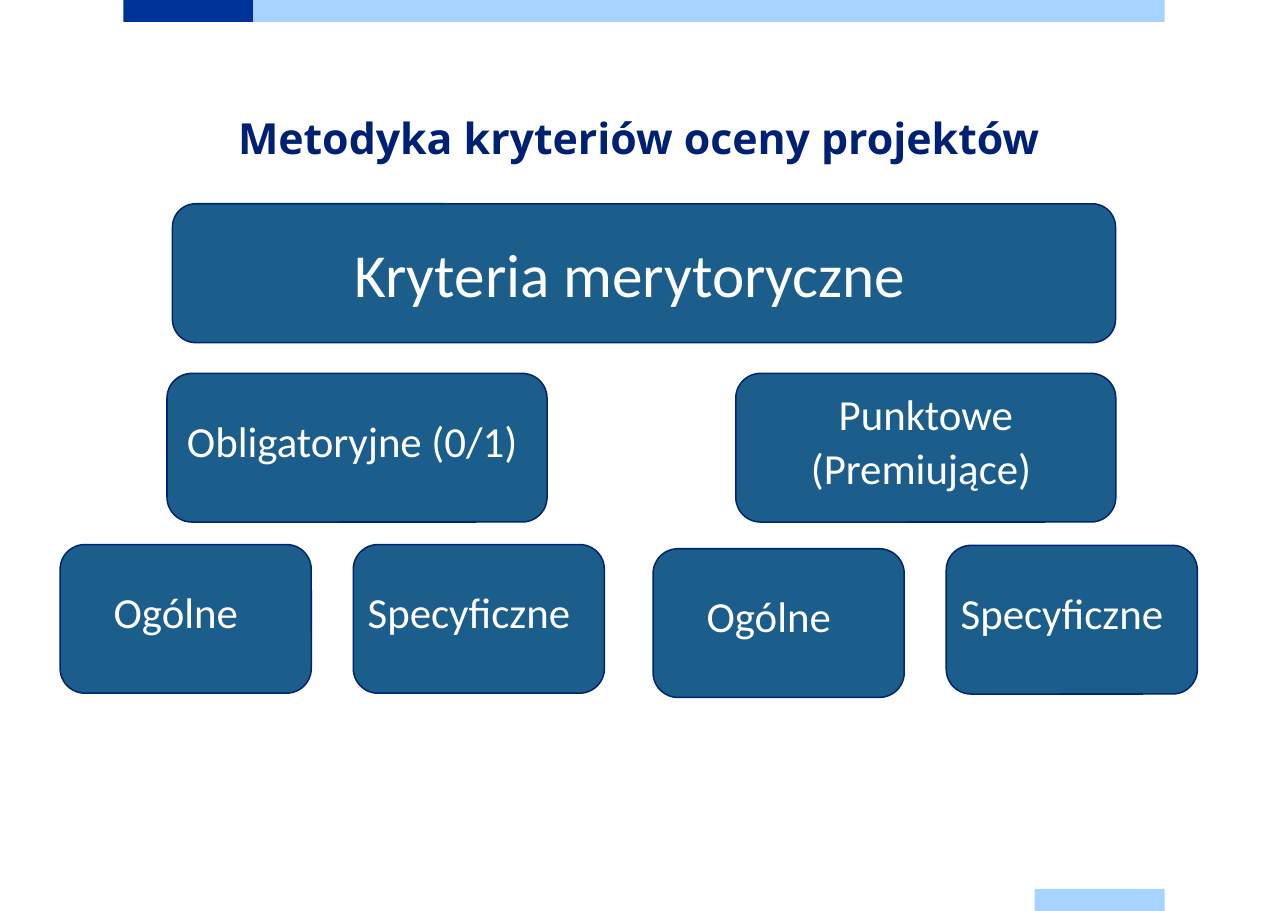
import dataclasses

import pptx
import pptx.dml.color
import pptx.enum.shapes
import pptx.enum.text
import pptx.oxml
import pptx.oxml.ns
import pptx.util

COLOURS = {
    "navy": "003399",
    "sky": "A6D3FF",
    "box": "1B5D8B",
    "outline": "002671",
    "title": "002073",
    "white": "FFFFFF",
}
PAGE_WIDTH, PAGE_HEIGHT = 11.69, 8.27
SHAPES = pptx.enum.shapes.MSO_SHAPE
ANCHOR = pptx.enum.text.MSO_ANCHOR


@dataclasses.dataclass
class Area:
    """Position and size in percent of the page."""
    left: float
    top: float
    width: float
    height: float


@dataclasses.dataclass
class Bar:
    area: Area
    colour: str


@dataclasses.dataclass
class Criterion:
    area: Area
    lines: list[str]
    size: int = 28
    leading: int | None = 24
    shift: float = 0.18  # right margin in inches, the left one is zero
    is_body: bool = False


# Decorative bars
MARGIN, STUB, BAR_HEIGHT = 9.58, 10.09, 2.42
CONTENT = 80.84
BARS = [
    Bar(Area(MARGIN, 0, STUB, BAR_HEIGHT), "navy"),
    Bar(Area(MARGIN + STUB, 0, CONTENT - STUB, BAR_HEIGHT), "sky"),
    Bar(Area(MARGIN + CONTENT - STUB, 100 - BAR_HEIGHT, STUB, BAR_HEIGHT), "sky"),
]

# Tree of criteria: one root, two branches, two leaves under each
ROW_HEIGHT, BRANCH_WIDTH, LEAF_WIDTH, LEAF_STEP = 16.32, 29.51, 19.5, 22.76
BRANCH_TOP = 40.99
LEAVES = [
    Criterion(Area(left + column * LEAF_STEP, tops[column], LEAF_WIDTH, ROW_HEIGHT), [label])
    for left, tops in ((4.67, (59.78, 59.78)), (50.71, (60.24, 59.87)))
    for column, label in enumerate(("Ogólne", "Specyficzne"))
]
CRITERIA = [
    Criterion(Area(13.39, 22.37, 73.22, 15.24), ["Kryteria merytoryczne"],
              size=40, leading=None, shift=0.25),
    Criterion(Area(12.97, BRANCH_TOP, BRANCH_WIDTH, ROW_HEIGHT),
              ["Obligatoryjne (0/1) "], shift=0, is_body=True),
    Criterion(Area(57.13, BRANCH_TOP, BRANCH_WIDTH, ROW_HEIGHT),
              ["Punktowe", "(Premiujące) "], shift=0),
    *LEAVES,
]


def colour(name: str) -> pptx.dml.color.RGBColor:
    return pptx.dml.color.RGBColor.from_string(COLOURS[name])


def lengths(area: Area) -> list[int]:
    return [
        pptx.util.Inches(PAGE_WIDTH * area.left / 100),
        pptx.util.Inches(PAGE_HEIGHT * area.top / 100),
        pptx.util.Inches(PAGE_WIDTH * area.width / 100),
        pptx.util.Inches(PAGE_HEIGHT * area.height / 100),
    ]


def place(box, area: Area) -> None:
    box.left, box.top, box.width, box.height = lengths(area)


def clear_margins(frame) -> None:
    frame.margin_left = frame.margin_right = frame.margin_top = frame.margin_bottom = 0


def write(frame, lines: list[str], size: int, leading: int | None,
          font: str, tint: str, bold: bool = False) -> None:
    frame.word_wrap = True
    frame.auto_size = pptx.enum.text.MSO_AUTO_SIZE.NONE
    for index, line in enumerate(lines):
        para = frame.add_paragraph() if index else frame.paragraphs[0]
        para.alignment = pptx.enum.text.PP_ALIGN.CENTER
        para.space_before = pptx.util.Pt(11 if index else 0)
        if leading:
            para.line_spacing = pptx.util.Pt(leading)
        span = para.add_run()
        span.text = line
        span.font.name = font
        span.font.size = pptx.util.Pt(size)
        span.font.bold = bold
        span.font.color.rgb = colour(tint)


def draw_bar(page, bar: Bar) -> None:
    box = page.shapes.add_shape(SHAPES.RECTANGLE, *lengths(bar.area))
    box.shadow.inherit = False
    box.fill.solid()
    box.fill.fore_color.rgb = colour(bar.colour)
    box.line.fill.background()


def round_body(page, area: Area):
    """Turn the body placeholder into a rounded box without bullets."""
    box = page.placeholders[1]
    place(box, area)
    box._element.spPr.append(pptx.oxml.parse_xml(
        f'<a:prstGeom {pptx.oxml.ns.nsdecls("a")} prst="roundRect"><a:avLst/></a:prstGeom>'))
    settings = box.text_frame.paragraphs[0]._p.get_or_add_pPr()
    settings.set("marL", "0")
    settings.set("indent", "0")
    settings.append(pptx.oxml.parse_xml(f'<a:buNone {pptx.oxml.ns.nsdecls("a")}/>'))
    return box


def draw_criterion(page, item: Criterion) -> None:
    if item.is_body:
        box = round_body(page, item.area)
    else:
        box = page.shapes.add_shape(SHAPES.ROUNDED_RECTANGLE, *lengths(item.area))
        box.shadow.inherit = False
    clear_margins(box.text_frame)
    box.text_frame.margin_right = pptx.util.Inches(item.shift)
    box.fill.solid()
    box.fill.fore_color.rgb = colour("box")
    box.line.color.rgb = colour("outline")
    box.line.width = pptx.util.Pt(1)
    box.text_frame.vertical_anchor = ANCHOR.MIDDLE
    write(box.text_frame, item.lines, item.size, item.leading, "Calibri", "white")


def draw_title(page) -> None:
    box = page.shapes.title
    place(box, Area(MARGIN, 11.85, CONTENT, 14.27))
    clear_margins(box.text_frame)
    box.text_frame.vertical_anchor = ANCHOR.TOP
    write(box.text_frame, ["Metodyka kryteriów oceny projektów "], 28, 36,
          "Open Sans", "title", bold=True)


def main() -> None:
    deck = pptx.Presentation()
    deck.slide_width = pptx.util.Inches(PAGE_WIDTH)
    deck.slide_height = pptx.util.Inches(PAGE_HEIGHT)
    page = deck.slides.add_slide(deck.slide_layouts[1])
    for bar in BARS:
        draw_bar(page, bar)
    for item in CRITERIA:
        draw_criterion(page, item)
    draw_title(page)
    deck.save("out.pptx")


if __name__ == "__main__":
    main()
